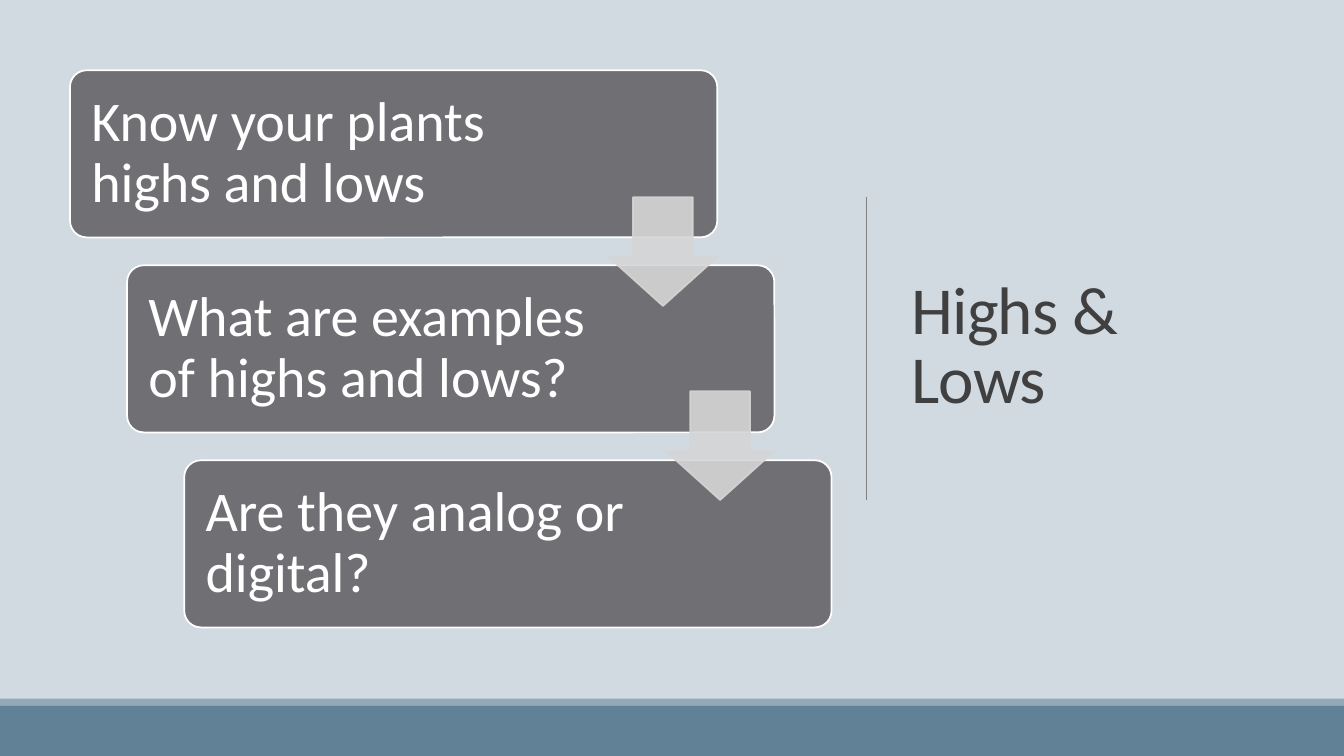
from lxml import etree
from pptx import Presentation
from pptx.dml.color import RGBColor
from pptx.enum.shapes import MSO_CONNECTOR, MSO_SHAPE
from pptx.enum.text import MSO_ANCHOR, MSO_AUTO_SIZE, PP_ALIGN
from pptx.oxml.ns import qn
from pptx.util import Pt

RECTANGLE = MSO_SHAPE.RECTANGLE
ROUNDED = MSO_SHAPE.ROUNDED_RECTANGLE
DOWN_ARROW = MSO_SHAPE.DOWN_ARROW
STRAIGHT = MSO_CONNECTOR.STRAIGHT
MIDDLE = MSO_ANCHOR.MIDDLE
NO_AUTOFIT = MSO_AUTO_SIZE.NONE
LEFT = PP_ALIGN.LEFT

PALE_BLUE = RGBColor(0xD1, 0xD9, 0xE1)
MID_BLUE = RGBColor(0x92, 0xA9, 0xB9)
DEEP_BLUE = RGBColor(0x61, 0x81, 0x97)
STEP_GRAY = RGBColor(0x6F, 0x6F, 0x74)
ARROW_GRAY = RGBColor(0xD5, 0xD5, 0xD6)
RULE_GRAY = RGBColor(0x80, 0x80, 0x80)
TITLE_GRAY = RGBColor(0x40, 0x40, 0x40)
WHITE = RGBColor(0xFF, 0xFF, 0xFF)

FONT = "Calibri"
SLIDE_WIDTH, SLIDE_HEIGHT = 960, 540
FOOTER_TOP = 499
STEPS = [
    "Know your plants highs and lows",
    "What are examples of highs and lows?",
    "Are they analog or digital?",
]


def add_block(slide, preset, left, top, width, height, color, outline=None):
    block = slide.shapes.add_shape(preset, Pt(left), Pt(top), Pt(width), Pt(height))
    block.shadow.inherit = False
    block.fill.solid()
    block.fill.fore_color.rgb = color
    if outline is None:
        block.line.fill.background()
    else:
        block.line.color.rgb = outline
        block.line.width = Pt(1.25)
    return block


def set_text(frame, text, size, color, line_spacing):
    frame.text = text
    frame.word_wrap = True
    frame.auto_size = NO_AUTOFIT
    frame.vertical_anchor = MIDDLE
    paragraph = frame.paragraphs[0]
    paragraph.alignment = LEFT
    paragraph.line_spacing = line_spacing
    paragraph.font.name = FONT
    paragraph.font.size = Pt(size)
    paragraph.font.color.rgb = color


def add_backdrop(slide, left, top, width, height):
    backdrop = add_block(slide, RECTANGLE, left, top, width, height, PALE_BLUE)
    slide.shapes.title._element.addprevious(backdrop._element)


def add_footer_bands(slide, left, top, width, height):
    stripe = 5.2
    add_block(slide, RECTANGLE, left, top, width, stripe, MID_BLUE)
    add_block(slide, RECTANGLE, left, top + stripe, width, height - stripe, DEEP_BLUE)


def add_title_panel(slide, left, top, width, height):
    title = slide.shapes.title
    title.left, title.top = Pt(left), Pt(top)
    title.width, title.height = Pt(width), Pt(height)
    set_text(title.text_frame, "Highs & Lows", 48, TITLE_GRAY, 0.85)
    for run in title.text_frame._txBody.iter(qn("a:r")):
        run.get_or_add_rPr().set("spc", "-50")

    rule_left, rule_length = left - 25, 216
    rule_top = top + (height - rule_length) / 2
    rule = slide.shapes.add_connector(
        STRAIGHT, Pt(rule_left), Pt(rule_top), Pt(rule_left), Pt(rule_top + rule_length)
    )
    rule.line.color.rgb = RULE_GRAY
    rule.line.width = Pt(0.5)
    etree.SubElement(rule._element.spPr, qn("a:effectLst"))


def add_staircase(slide, left, top, width, height):
    step_width, step_height = width * 0.85, height * 0.3
    shift = (width - step_width) / (len(STEPS) - 1)
    drop = (height - step_height) / (len(STEPS) - 1)
    for index, text in enumerate(STEPS):
        step = add_block(
            slide, ROUNDED, left + index * shift, top + index * drop,
            step_width, step_height, STEP_GRAY, WHITE,
        )
        step.adjustments[0] = 0.1
        frame = step.text_frame
        frame.margin_left, frame.margin_right = Pt(11.8), Pt(120)
        frame.margin_top = frame.margin_bottom = Pt(12)
        set_text(frame, text, 40, WHITE, 0.9)

    arrow_size = step_height * 0.65
    for index in range(len(STEPS) - 1):
        arrow = add_block(
            slide, DOWN_ARROW,
            left + index * shift + step_width - arrow_size,
            top + index * (drop - 0.7) + step_height * 0.76,
            arrow_size, arrow_size, ARROW_GRAY, ARROW_GRAY,
        )
        arrow.adjustments[0] = 0.55
        arrow.adjustments[1] = 0.45
        for color in arrow._element.spPr.iter(qn("a:srgbClr")):
            etree.SubElement(color, qn("a:alpha"), val="90000")


def build_slide(presentation):
    slide = presentation.slides.add_slide(presentation.slide_layouts[5])
    slide.background.fill.solid()
    slide.background.fill.fore_color.rgb = PALE_BLUE
    add_backdrop(slide, 0, 0, SLIDE_WIDTH, FOOTER_TOP)
    add_title_panel(slide, 643.7, 50, 265.5, 398)
    add_footer_bands(slide, 0, FOOTER_TOP, SLIDE_WIDTH, SLIDE_HEIGHT - FOOTER_TOP)
    add_staircase(slide, 50, 50.2, 544, 398)


def main():
    presentation = Presentation()
    presentation.slide_width = Pt(SLIDE_WIDTH)
    presentation.slide_height = Pt(SLIDE_HEIGHT)
    build_slide(presentation)
    presentation.save("out.pptx")


if __name__ == "__main__":
    main()
